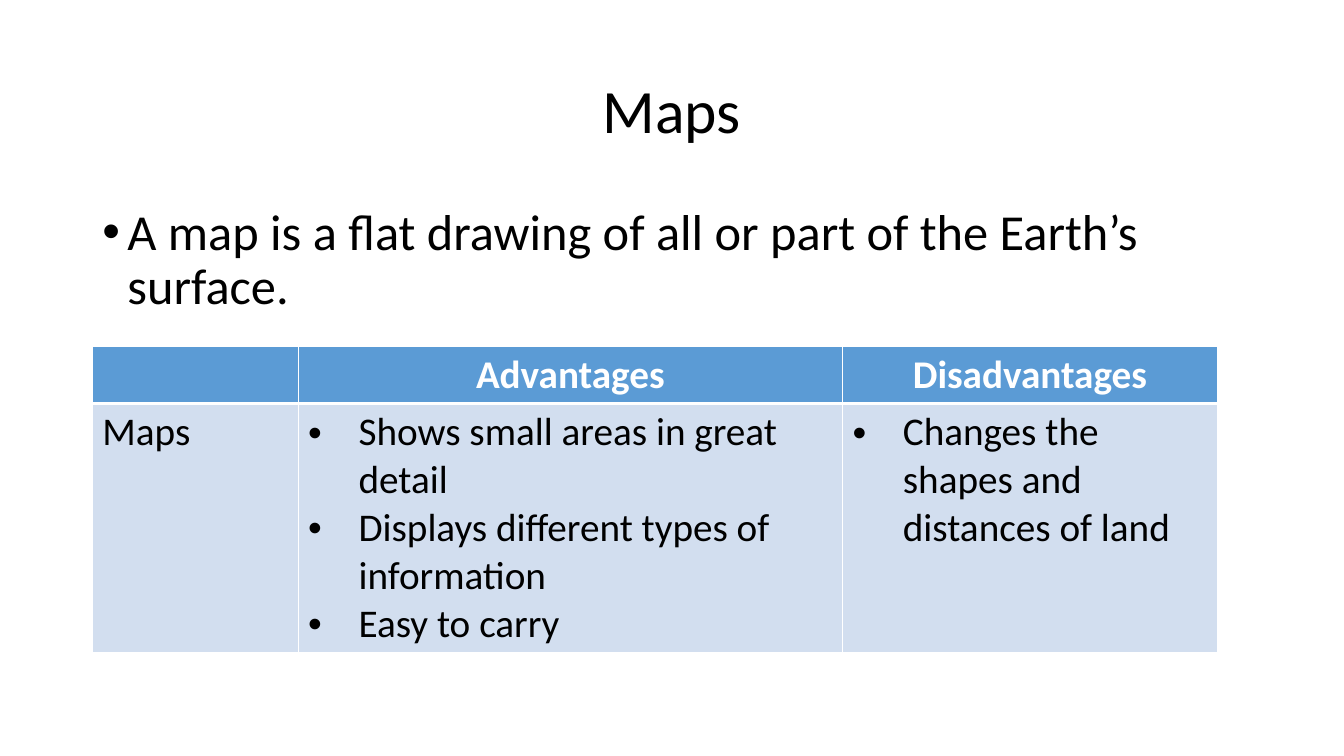
from lxml import etree
from pptx import Presentation
from pptx.dml.color import RGBColor
from pptx.enum.text import MSO_ANCHOR, PP_ALIGN
from pptx.oxml.ns import qn
from pptx.util import Pt

CENTER, LEFT = PP_ALIGN.CENTER, PP_ALIGN.LEFT
MIDDLE, TOP = MSO_ANCHOR.MIDDLE, MSO_ANCHOR.TOP
FONT = "Calibri"
BLACK, WHITE = "000000", "FFFFFF"
HEADER_FILL, BODY_FILL = "5B9BD5", "D2DEEF"
COLUMN_WIDTHS = (147, 388.8, 267.8)
ROW_HEIGHTS = (41, 178)
HEADERS = ("", "Advantages", "Disadvantages")
ADVANTAGES = (
    "Shows small areas in great detail",
    "Displays different types of information",
    "Easy to carry",
)
DISADVANTAGES = ("Changes the shapes and distances of land",)


def rgb(color):
    return RGBColor.from_string(color)


def add_run(p, text, size, color=BLACK, bold=False):
    r = p.add_run()
    r.text = text
    r.font.name = FONT
    r.font.size = Pt(size)
    r.font.bold = bold
    r.font.color.rgb = rgb(color)


def set_bullet(p, indent):
    """Give the paragraph a round bullet with a hanging indent in points."""
    pPr = p._p.get_or_add_pPr()
    pPr.set("marL", str(Pt(indent)))
    pPr.set("indent", str(-Pt(indent)))
    etree.SubElement(pPr, qn("a:buFont"), typeface="Arial")
    etree.SubElement(pPr, qn("a:buChar"), char="•")


def add_text_box(slide, box, anchor):
    tf = slide.shapes.add_textbox(*map(Pt, box)).text_frame
    tf.word_wrap = True
    tf.vertical_anchor = anchor
    p = tf.paragraphs[0]
    p.line_spacing = 0.9
    return p


def add_title(slide, box):
    p = add_text_box(slide, box, MIDDLE)
    p.alignment = CENTER
    add_run(p, "Maps", 44)


def add_definition(slide, box):
    p = add_text_box(slide, box, TOP)
    p.space_before = Pt(10)
    set_bullet(p, 18)
    add_run(p, "A map is a flat drawing of all or part of the Earth’s surface.", 36)


def set_borders(cell, bottom):
    """Draw white cell borders, 1 pt except for the bottom one."""
    tcPr = cell._tc.get_or_add_tcPr()
    for side, width in (("L", 1), ("R", 1), ("T", 1), ("B", bottom)):
        ln = etree.SubElement(tcPr, qn(f"a:ln{side}"), w=str(Pt(width)))
        fill = etree.SubElement(ln, qn("a:solidFill"))
        etree.SubElement(fill, qn("a:srgbClr"), val=WHITE)


def fill_cell(cell, lines, header=False, bulleted=False):
    set_borders(cell, 3 if header else 1)
    cell.fill.solid()
    cell.fill.fore_color.rgb = rgb(HEADER_FILL if header else BODY_FILL)
    tf = cell.text_frame
    for i, line in enumerate(lines):
        p = tf.add_paragraph() if i else tf.paragraphs[0]
        p.alignment = CENTER if header else LEFT
        if bulleted:
            set_bullet(p, 36)
        if line:
            add_run(p, line, 28, WHITE if header else BLACK, header)


def add_comparison(slide, left, top):
    table = slide.shapes.add_table(
        len(ROW_HEIGHTS), len(COLUMN_WIDTHS), Pt(left), Pt(top),
        Pt(sum(COLUMN_WIDTHS)), Pt(sum(ROW_HEIGHTS))).table
    for column, width in zip(table.columns, COLUMN_WIDTHS):
        column.width = Pt(width)
    for row, height in zip(table.rows, ROW_HEIGHTS):
        row.height = Pt(height)
    for i, header in enumerate(HEADERS):
        fill_cell(table.cell(0, i), [header], header=True)
    for i, lines in enumerate((("Maps",), ADVANTAGES, DISADVANTAGES)):
        fill_cell(table.cell(1, i), lines, bulleted=i > 0)


def main():
    prs = Presentation()
    prs.slide_width, prs.slide_height = Pt(960), Pt(540)
    slide = prs.slides.add_slide(prs.slide_layouts[6])
    add_title(slide, (66, 28.8, 828, 104.4))
    add_definition(slide, (66, 144, 828, 342.6))
    add_comparison(slide, 66, 247.3)
    prs.save("out.pptx")


if __name__ == "__main__":
    main()
